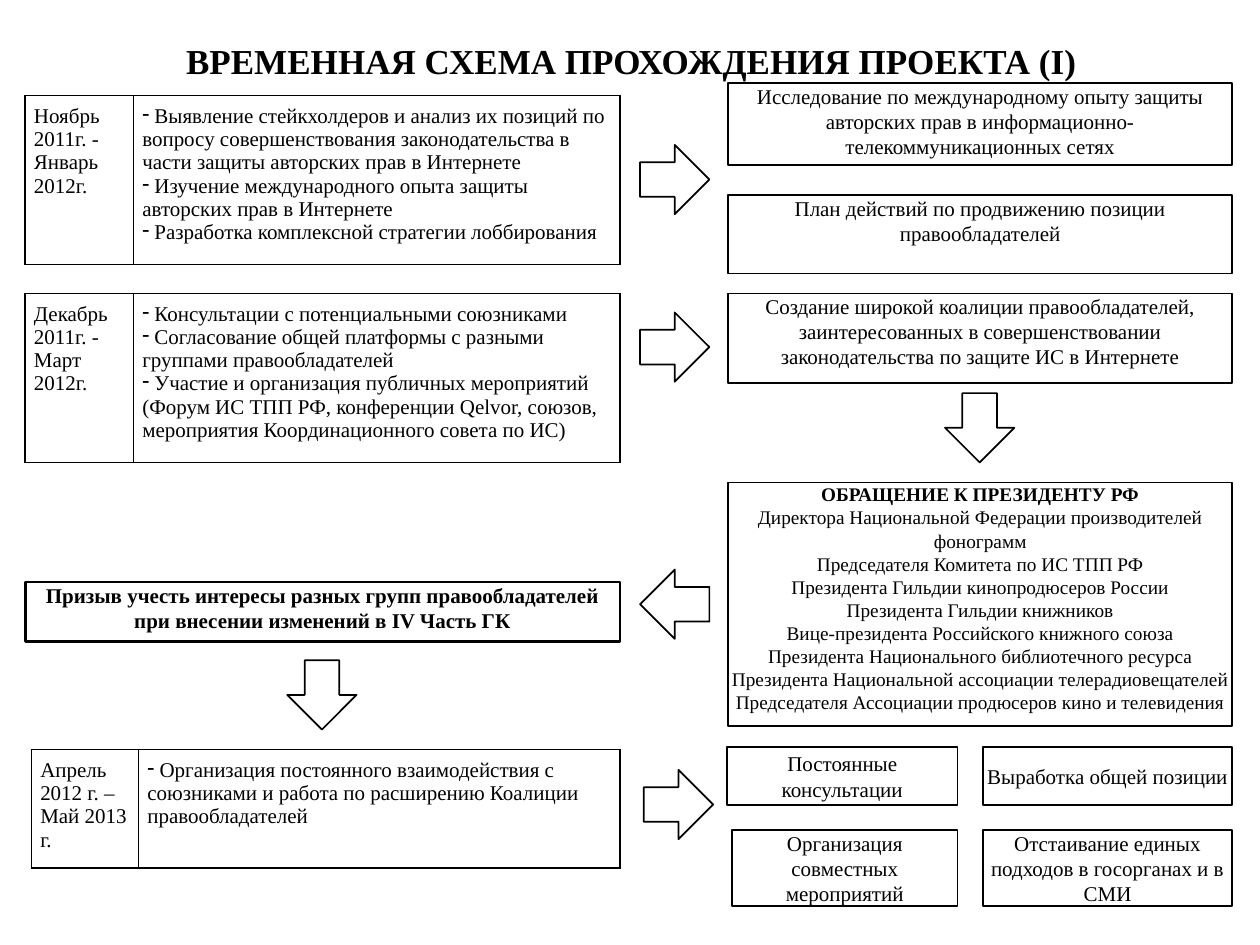
import pptx
import pptx.dml.color
import pptx.enum.shapes
import pptx.enum.text
import pptx.oxml
import pptx.oxml.ns
import pptx.util

Inches = pptx.util.Inches
Pt = pptx.util.Pt
Align = pptx.enum.text.PP_ALIGN
Anchor = pptx.enum.text.MSO_ANCHOR
Shape = pptx.enum.shapes.MSO_SHAPE

THEME = {
    "font": "Times New Roman",
    "ink": pptx.dml.color.RGBColor(0, 0, 0),
    "paper": pptx.dml.color.RGBColor(255, 255, 255),
    "title": 20,
    "body": 12,
    "small": 11,
    "line": 1,
    "heavy_line": 1.5,
}
LEFT, STAGE_RIGHT = 0.2, 4.92
RESULT_LEFT, RESULT_RIGHT = 5.78, 9.78
ARROW_SIZE, CELL_INSET = 0.55, 0.07

TITLE = "ВРЕМЕННАЯ СХЕМА ПРОХОЖДЕНИЯ ПРОЕКТА (I)"

STAGES = [
    {"left": LEFT, "top": 0.76, "height": 1.25, "date_width": 0.86,
     "date": "Ноябрь 2011г. - Январь 2012г.",
     "tasks": [
         "Выявление стейкхолдеров и анализ их позиций по вопросу совершенствования "
         "законодательства в части защиты авторских прав в Интернете",
         "Изучение международного опыта защиты авторских прав в Интернете",
         "Разработка комплексной стратегии лоббирования"]},
    {"left": LEFT, "top": 2.33, "height": 1.34, "date_width": 0.86,
     "date": "Декабрь 2011г. - Март 2012г.",
     "tasks": [
         "Консультации с потенциальными союзниками",
         "Согласование общей платформы с разными группами правообладателей",
         "Участие и организация публичных мероприятий (Форум ИС ТПП РФ, "
         "конференции Qelvor, союзов, мероприятия Координационного совета по ИС)"]},
    {"left": 0.25, "top": 5.95, "height": 0.88, "date_width": 0.85,
     "date": "Апрель 2012 г. – Май 2013 г.",
     "tasks": [
         "Организация постоянного взаимодействия с союзниками и работа "
         "по расширению Коалиции правообладателей"]},
]

RESULTS = [
    (0.66, 0.65, "Исследование по международному опыту защиты авторских прав "
                 "в информационно-телекоммуникационных сетях"),
    (1.55, 0.62, "План действий по продвижению позиции правообладателей"),
    (2.33, 0.71, "Создание широкой коалиции правообладателей, заинтересованных "
                 "в совершенствовании законодательства по защите ИС в Интернете"),
]

APPEAL = [
    "ОБРАЩЕНИЕ К ПРЕЗИДЕНТУ РФ",
    "Директора Национальной Федерации производителей фонограмм",
    "Председателя Комитета по ИС ТПП РФ",
    "Президента Гильдии кинопродюсеров России",
    "Президента Гильдии книжников",
    "Вице-президента Российского книжного союза",
    "Президента Национального библиотечного ресурса",
    "Президента Национальной ассоциации телерадиовещателей",
    "Председателя Ассоциации продюсеров кино и телевидения",
]

CALL = [
    "Призыв учесть интересы разных групп правообладателей",
    "при внесении изменений в IV Часть ГК",
]

OUTCOMES = [
    (5.77, 5.93, 1.83, 0.46, ["Постоянные", "консультации"]),
    (7.8, 5.93, 1.98, 0.46, ["Выработка общей позиции"]),
    (5.81, 6.59, 1.79, 0.6, ["Организация совместных мероприятий"]),
    (7.8, 6.59, 1.98, 0.6, ["Отстаивание единых", "подходов в госорганах и в СМИ"]),
]

ARROWS = [
    (5.08, 1.15, 0),
    (5.08, 2.48, 0),
    (7.5, 3.12, 90),
    (5.08, 4.52, 180),
    (2.28, 5.24, 90),
    (5.11, 6.11, 0),
]


def apply_format(target, values):
    for name, value in values.items():
        setattr(target, name, value)


def write_text(frame, lines, size, bold_lines=0, align=Align.CENTER, anchor=Anchor.TOP, bullet=None):
    apply_format(frame, {
        "word_wrap": True, "vertical_anchor": anchor,
        "margin_left": 0, "margin_top": 0, "margin_right": 0, "margin_bottom": 0,
    })
    write_paragraphs(frame, lines, size, bold_lines, align, bullet)


def write_paragraphs(frame, lines, size, bold_lines=0, align=Align.LEFT, bullet=None):
    for index, line in enumerate(lines):
        paragraph = frame.paragraphs[0] if index == 0 else frame.add_paragraph()
        paragraph.alignment = align
        run = paragraph.add_run()
        run.text = f" {line}" if bullet else line
        apply_format(run.font, {"name": THEME["font"], "size": Pt(size), "bold": index < bold_lines})
        run.font.color.rgb = THEME["ink"]
        if bullet:
            properties = paragraph._p.get_or_add_pPr()
            properties.set("marL", "0")
            properties.set("indent", "0")
            properties.append(pptx.oxml.parse_xml(
                f'<a:buChar {pptx.oxml.ns.nsdecls("a")} char="{bullet}"/>'))


def add_outlined(slide, kind, left, top, width, height, line=THEME["line"]):
    shape = slide.shapes.add_shape(kind, *map(Inches, (left, top, width, height)))
    shape.shadow.inherit = False
    shape.fill.background()
    shape.line.color.rgb = THEME["ink"]
    shape.line.width = Pt(line)
    return shape


def add_box(slide, left, top, width, height, lines, size=THEME["body"], bold_lines=0,
            anchor=Anchor.TOP, line=THEME["line"]):
    shape = add_outlined(slide, Shape.RECTANGLE, left, top, width, height, line)
    write_text(shape.text_frame, lines, size, bold_lines, anchor=anchor)


def add_arrow(slide, left, top, rotation):
    shape = add_outlined(slide, Shape.RIGHT_ARROW, left, top, ARROW_SIZE, ARROW_SIZE)
    shape.fill.solid()
    shape.fill.fore_color.rgb = THEME["paper"]
    shape.rotation = rotation


def add_borders(cell):
    properties = cell._tc.get_or_add_tcPr()
    for index, side in enumerate(("lnL", "lnR", "lnT", "lnB")):
        properties.insert(index, pptx.oxml.parse_xml(
            f'<a:{side} {pptx.oxml.ns.nsdecls("a")} w="{Pt(THEME["line"])}">'
            f'<a:solidFill><a:srgbClr val="{THEME["ink"]}"/></a:solidFill></a:{side}>'))


def add_stage(slide, stage):
    width = STAGE_RIGHT - stage["left"]
    area = map(Inches, (stage["left"], stage["top"], width, stage["height"]))
    table = slide.shapes.add_table(1, 2, *area).table
    apply_format(table, {"first_row": False, "horz_banding": False})
    table.columns[0].width = Inches(stage["date_width"])
    table.columns[1].width = Inches(width - stage["date_width"])
    contents = [([stage["date"]], None), (stage["tasks"], "-")]
    for cell, (lines, bullet) in zip(table.rows[0].cells, contents):
        inset = Inches(CELL_INSET)
        apply_format(cell, {
            "margin_left": inset, "margin_top": inset,
            "margin_right": inset, "margin_bottom": inset,
        })
        cell.fill.background()
        add_borders(cell)
        write_paragraphs(cell.text_frame, lines, THEME["body"], bullet=bullet)


def main():
    presentation = pptx.Presentation()
    apply_format(presentation, {"slide_width": Inches(10), "slide_height": Inches(7.5)})
    slide = presentation.slides.add_slide(presentation.slide_layouts[6])
    title = slide.shapes.add_textbox(*map(Inches, (0.51, 0.21, 9, 0.54)))
    write_text(title.text_frame, [TITLE], THEME["title"], bold_lines=1, anchor=Anchor.MIDDLE)
    for stage in STAGES:
        add_stage(slide, stage)
    result_width = RESULT_RIGHT - RESULT_LEFT
    for top, height, text in RESULTS:
        add_box(slide, RESULT_LEFT, top, result_width, height, [text])
    add_box(slide, RESULT_LEFT, 3.83, result_width, 1.93, APPEAL, THEME["small"], bold_lines=1)
    add_box(slide, LEFT, 4.62, STAGE_RIGHT - LEFT, 0.47, CALL, bold_lines=len(CALL),
            line=THEME["heavy_line"])
    for left, top, width, height, lines in OUTCOMES:
        add_box(slide, left, top, width, height, lines, anchor=Anchor.MIDDLE)
    for arrow in ARROWS:
        add_arrow(slide, *arrow)
    presentation.save("out.pptx")


if __name__ == "__main__":
    main()
